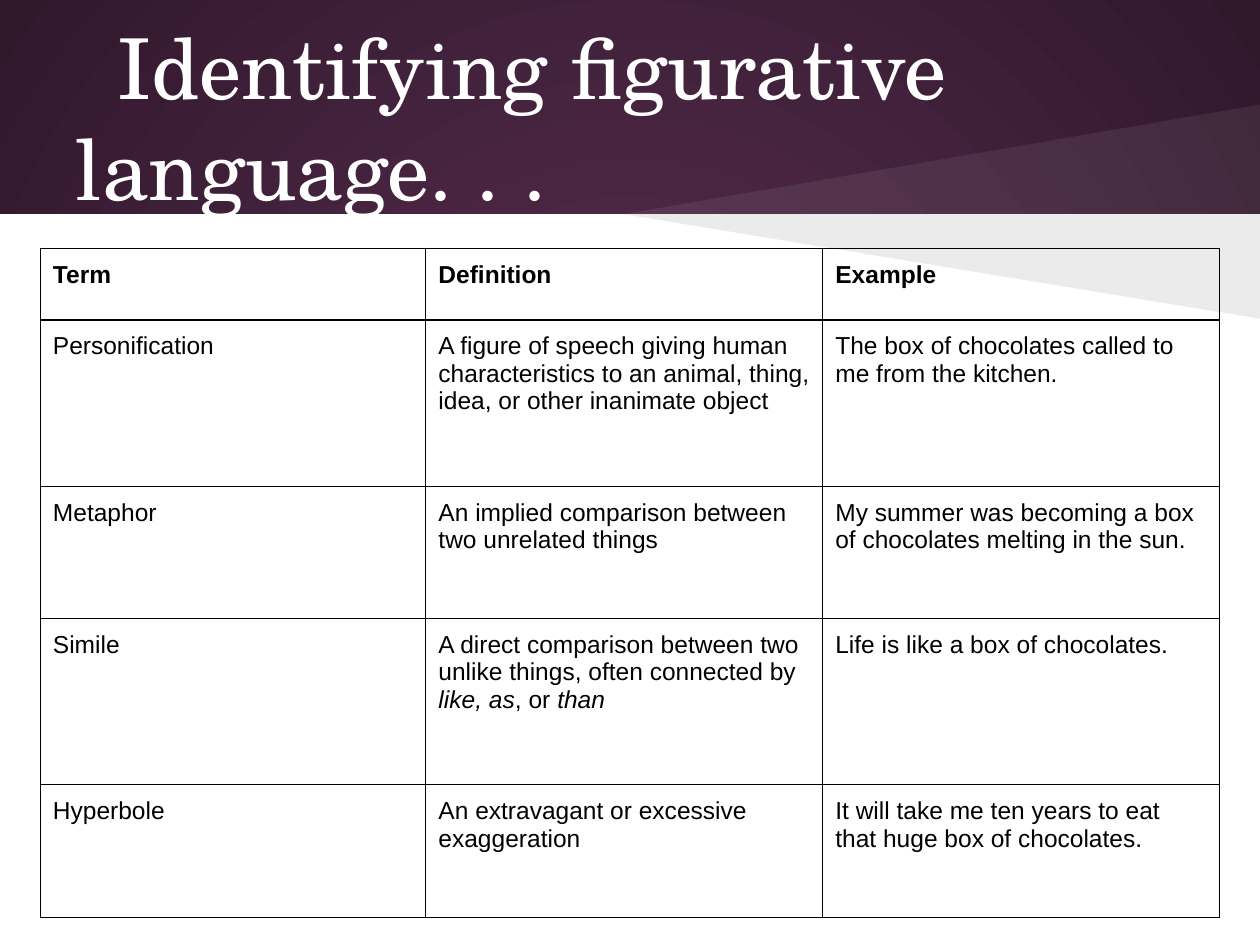
from lxml import etree
from pptx import Presentation
from pptx import util as u
from pptx.dml.color import RGBColor
from pptx.enum import shapes, text
from pptx.oxml import ns, parse_xml

COLORS = {"plum": "592D50", "dark_plum": "30182B", "white": "FFFFFF", "black": "000000"}
BAND_HEIGHT = 1.7
COLUMN_WIDTHS = [3.06, 3.15, 3.15]
ROW_HEIGHTS = [0.57, 1.32, 1.05, 1.32, 1.05]
ROWS = [
    ["Term", "Definition", "Example"],
    ["Personification",
     "A figure of speech giving human characteristics to an animal, thing, idea, "
     "or other inanimate object",
     "The box of chocolates called to me from the kitchen."],
    ["Metaphor", "An implied comparison between two unrelated things",
     "My summer was becoming a box of chocolates melting in the sun."],
    ["Simile",
     "A direct comparison between two unlike things, often connected by "
     "*like, as*, or *than*",
     "Life is like a box of chocolates."],
    ["Hyperbole", "An extravagant or excessive exaggeration",
     "It will take me ten years to eat that huge box of chocolates."],
]


def rgb(name):
    return RGBColor.from_string(COLORS[name])


def set_font(font, name, size, color):
    font.name = name
    font.size = u.Pt(size)
    font.color.rgb = rgb(color)


def set_margins(frame):
    for side in ("left", "right", "top", "bottom"):
        setattr(frame, f"margin_{side}", u.Inches(0.1))


def paint(shape, color, opacity=100):
    shape.shadow.inherit = False
    shape.line.fill.background()
    shape.fill.solid()
    shape.fill.fore_color.rgb = rgb(color)
    if opacity < 100:
        color_element = shape._element.spPr.find(".//" + ns.qn("a:srgbClr"))
        etree.SubElement(color_element, ns.qn("a:alpha"), val=str(opacity * 1000))


def paint_background(slide):
    fill = slide.background.fill
    fill.gradient()
    for stop, color, position in zip(fill.gradient_stops, ("plum", "dark_plum"), (0, 1)):
        stop.color.rgb = rgb(color)
        stop.position = position
    linear = slide._element.find(".//" + ns.qn("a:lin"))
    linear.getparent().replace(linear, parse_xml(
        f'<a:path {ns.nsdecls("a")} path="circle">'
        '<a:fillToRect l="50000" t="50000" r="50000" b="50000"/></a:path>'))


def add_beam(slide, edge_y, color, opacity):
    builder = slide.shapes.build_freeform(
        u.Inches(10), u.Inches(BAND_HEIGHT))
    builder.add_line_segments([
        (u.Inches(4.95), u.Inches(BAND_HEIGHT)),
        (u.Inches(10), u.Inches(edge_y))])
    paint(builder.convert_to_shape(), color, opacity)


def add_title(slide, wording):
    title = slide.shapes.title
    slide.shapes._spTree.append(title._element)
    title.left, title.top = u.Inches(0.5), u.Inches(0.3)
    title.width, title.height = u.Inches(9), u.Inches(1.25)
    frame = title.text_frame
    frame.text = wording
    frame.word_wrap = True
    frame.auto_size = text.MSO_AUTO_SIZE.NONE
    frame.vertical_anchor = text.MSO_ANCHOR.MIDDLE
    set_margins(frame)
    paragraph = frame.paragraphs[0]
    paragraph.alignment = text.PP_ALIGN.LEFT
    paragraph._p.get_or_add_pPr().set("indent", str(u.Inches(0.33)))
    set_font(paragraph.font, "TeX Gyre Schola", 48, "white")


def add_borders(cell):
    properties = cell._tc.get_or_add_tcPr()
    for index, side in enumerate(("lnL", "lnR", "lnT", "lnB")):
        properties.insert(index, parse_xml(
            f'<a:{side} {ns.nsdecls("a")} w="{u.Pt(0.75)}"><a:solidFill>'
            f'<a:srgbClr val="{COLORS["black"]}"/></a:solidFill></a:{side}>'))


def fill_cell(cell, wording, bold):
    cell.fill.background()
    set_margins(cell)
    add_borders(cell)
    paragraph = cell.text_frame.paragraphs[0]
    set_font(paragraph.font, "Arial", 14, "black")
    paragraph.font.bold = bold
    for index, part in enumerate(wording.split("*")):
        if part:
            run = paragraph.add_run()
            run.text = part
            if index % 2:
                run.font.italic = True


def add_terms_table(slide):
    table = slide.shapes.add_table(
        len(ROWS), len(COLUMN_WIDTHS), u.Inches(0.32), u.Inches(1.97),
        u.Inches(sum(COLUMN_WIDTHS)), u.Inches(sum(ROW_HEIGHTS))).table
    table.first_row = table.horz_banding = False
    for column, width in zip(table.columns, COLUMN_WIDTHS):
        column.width = u.Inches(width)
    for index, (row, height) in enumerate(zip(table.rows, ROW_HEIGHTS)):
        row.height = u.Inches(height)
        for cell, wording in zip(row.cells, ROWS[index]):
            fill_cell(cell, wording, bold=index == 0)


def main():
    presentation = Presentation()
    presentation.slide_width, presentation.slide_height = u.Inches(10), u.Inches(7.5)
    slide = presentation.slides.add_slide(presentation.slide_layouts.get_by_name("Title Only"))
    paint_background(slide)
    panel = slide.shapes.add_shape(
        shapes.MSO_SHAPE.RECTANGLE, 0, u.Inches(BAND_HEIGHT), u.Inches(10), u.Inches(5.8))
    paint(panel, "white")
    add_beam(slide, 0.83, "white", 7)
    add_beam(slide, 2.53, "black", 8)
    add_title(slide, "Identifying figurative language. . .")
    add_terms_table(slide)
    presentation.save("out.pptx")


if __name__ == "__main__":
    main()
